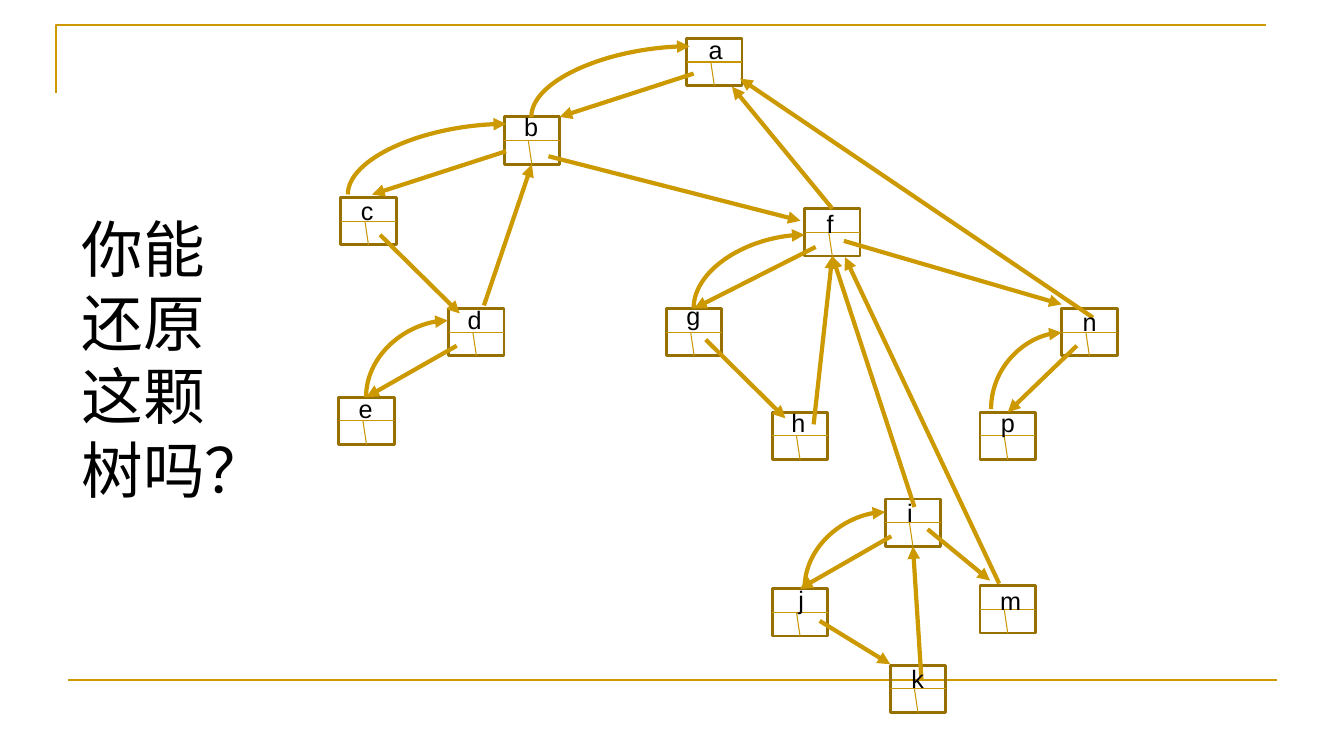
from lxml import etree
from pptx import Presentation
from pptx.dml.color import RGBColor
from pptx.enum.shapes import MSO_CONNECTOR, MSO_SHAPE
from pptx.enum.text import MSO_AUTO_SIZE
from pptx.oxml.ns import qn
from pptx.util import Pt

PX = 9144  # 100 px to the inch
GOLD = RGBColor(0xCC, 0x99, 0x00)
INNER_GOLD = RGBColor(0xC8, 0x96, 0x00)
DARK_GOLD = RGBColor(0x97, 0x71, 0x00)
BLACK = RGBColor(0, 0, 0)

QUESTION = "你能还原这颗树吗？"
BOX_W, BOX_H, LABEL_H = 55, 47, 40
TOP, LEFT, BOTTOM, RIGHT = range(4)

# name: box left, box top, label left, label top, label width
NODES = {
    "h": (766, 409, 775, 399, 34),
    "k": (883, 660, 894, 653, 33),
    "a": (681, 38, 693, 29, 34),
    "d": (445, 306, 454, 297, 34),
    "f": (798, 207, 810, 202, 27),
    "b": (500, 116, 510, 106, 34),
    "n": (1053, 306, 1064, 299, 34),
    "g": (661, 306, 671, 293, 34),
    "m": (972, 581, 982, 576, 41),
    "c": (338, 196, 348, 189, 33),
    "e": (336, 394, 346, 385, 34),
    "p": (972, 409, 983, 399, 34),
    "j": (766, 584, 782, 575, 26),
    "i": (878, 495, 890, 488, 26),
}

# each end is a point or a (node, side) pair
ARROWS = [
    ((688, 73), (555, 116)),           # a to b
    ((502, 150), (369, 193)),          # b to c
    ((377, 233), (456, 311)),          # c to d
    ((480, 303), ("b", BOTTOM)),
    ((544, 155), (794, 219)),          # b to f
    (("f", TOP), (726, 86)),           # f to a
    ((809, 245), ("g", TOP)),
    ((700, 337), (779, 415)),          # g to h
    ((807, 421), ("f", BOTTOM)),
    ((907, 503), ("f", BOTTOM)),
    ((991, 579), (838, 255)),          # m to f
    ((453, 343), ("e", TOP)),
    ((884, 532), ("j", TOP)),
    ((813, 616), (883, 659)),          # j to k
    ((914, 675), ("i", BOTTOM)),
    ((920, 525), (982, 576)),          # i to m
    ((837, 239), (1053, 302)),         # f to n
    ((1084, 315), (734, 78)),          # n to a
    ((1068, 343), ("p", TOP)),
]

# child to parent, leaving upwards and arriving from the left
CURVES = [
    ((527, 116), (684, 46)),
    ((345, 193), (502, 123)),
    ((688, 306), (798, 233)),
    ((363, 394), (444, 318)),
    ((798, 584), (878, 508)),
    ((983, 406), (1053, 330)),
]

prs = Presentation()
prs.slide_width, prs.slide_height = 1333 * PX, 750 * PX
s = prs.slides.add_slide(prs.slide_layouts[6])
boxes = {}


def emu(*lengths):
    return [round(v * PX) for v in lengths]


def add_text(text, x, y, w, h, size=18, wrap=False, color=BLACK, font="Arial"):
    tf = s.shapes.add_textbox(*emu(x, y, w, h)).text_frame
    tf.word_wrap = wrap
    tf.auto_size = MSO_AUTO_SIZE.SHAPE_TO_FIT_TEXT
    r = tf.paragraphs[0].add_run()
    r.text = text
    r.font.size, r.font.name, r.font.color.rgb = Pt(size), font, color


def locate(end):
    """Point of an end: given directly, or the middle of a node's side."""
    if end[0] not in NODES:
        return end
    x, y = NODES[end[0]][:2]
    dx, dy = [(0.5, 0), (0, 0.5), (0.5, 1), (1, 0.5)][end[1]]
    return x + dx * BOX_W, y + dy * BOX_H


def add_line(start, end, color=GOLD, width=3.0, arrow=False, kind=MSO_CONNECTOR.STRAIGHT):
    line = s.shapes.add_connector(kind, *emu(*locate(start), *locate(end)))
    if start[0] in NODES:
        line.begin_connect(boxes[start[0]], start[1])
    if end[0] in NODES:
        line.end_connect(boxes[end[0]], end[1])
    line.line.color.rgb, line.line.width = color, Pt(width)
    if arrow:
        etree.SubElement(line.line._get_or_add_ln(), qn("a:tailEnd"), type="triangle")
    etree.SubElement(line._element.spPr, qn("a:effectLst"))
    return line


def add_curve(start, end):
    curve = add_line(start, end, arrow=True, kind=MSO_CONNECTOR.CURVE)
    (x1, y1), (x2, y2) = start, end
    w, h = y1 - y2, x2 - x1  # sides swap under the quarter turn
    curve.left, curve.top, curve.width, curve.height = emu(
        (x1 + x2 - w) / 2, (y1 + y2 - h) / 2, w, h)
    sp_pr = curve._element.spPr
    xfrm = sp_pr.find(qn("a:xfrm"))
    for key, value in (("rot", "5400000"), ("flipH", "1"), ("flipV", "1")):
        xfrm.set(key, value)
    sp_pr.find(qn("a:prstGeom")).set("prst", "curvedConnector2")


# Frame lines
fb = s.shapes.build_freeform(56, 92, scale=PX)
fb.add_line_segments([(56, 25), (1256, 25)], close=False)
corner = fb.convert_to_shape()
corner.shadow.inherit = False
corner.fill.background()
corner.line.color.rgb, corner.line.width = GOLD, Pt(1.5)
add_line((67, 675), (1267, 675), width=1.5)

# Node boxes, each with a label row over two pointer cells
for name, (x, y, *_) in NODES.items():
    box = s.shapes.add_shape(MSO_SHAPE.RECTANGLE, *emu(x, y, BOX_W, BOX_H))
    box.shadow.inherit = False
    box.fill.background()
    box.line.color.rgb, box.line.width = DARK_GOLD, Pt(2)
    boxes[name] = box
    add_line((name, LEFT), (name, RIGHT), color=INNER_GOLD, width=0.75)
    add_line((name, BOTTOM), (x + 24, y + BOX_H / 2), color=INNER_GOLD, width=0.75)

# Pointers
for start, end in ARROWS:
    add_line(start, end, arrow=True)
for start, end in CURVES:
    add_curve(start, end)

# Labels and question
for name, (_, _, x, y, w) in NODES.items():
    add_text(name, x, y, w, LABEL_H)
add_text(QUESTION, 71, 204, 167, 306, size=44, wrap=True)

prs.save("out.pptx")
